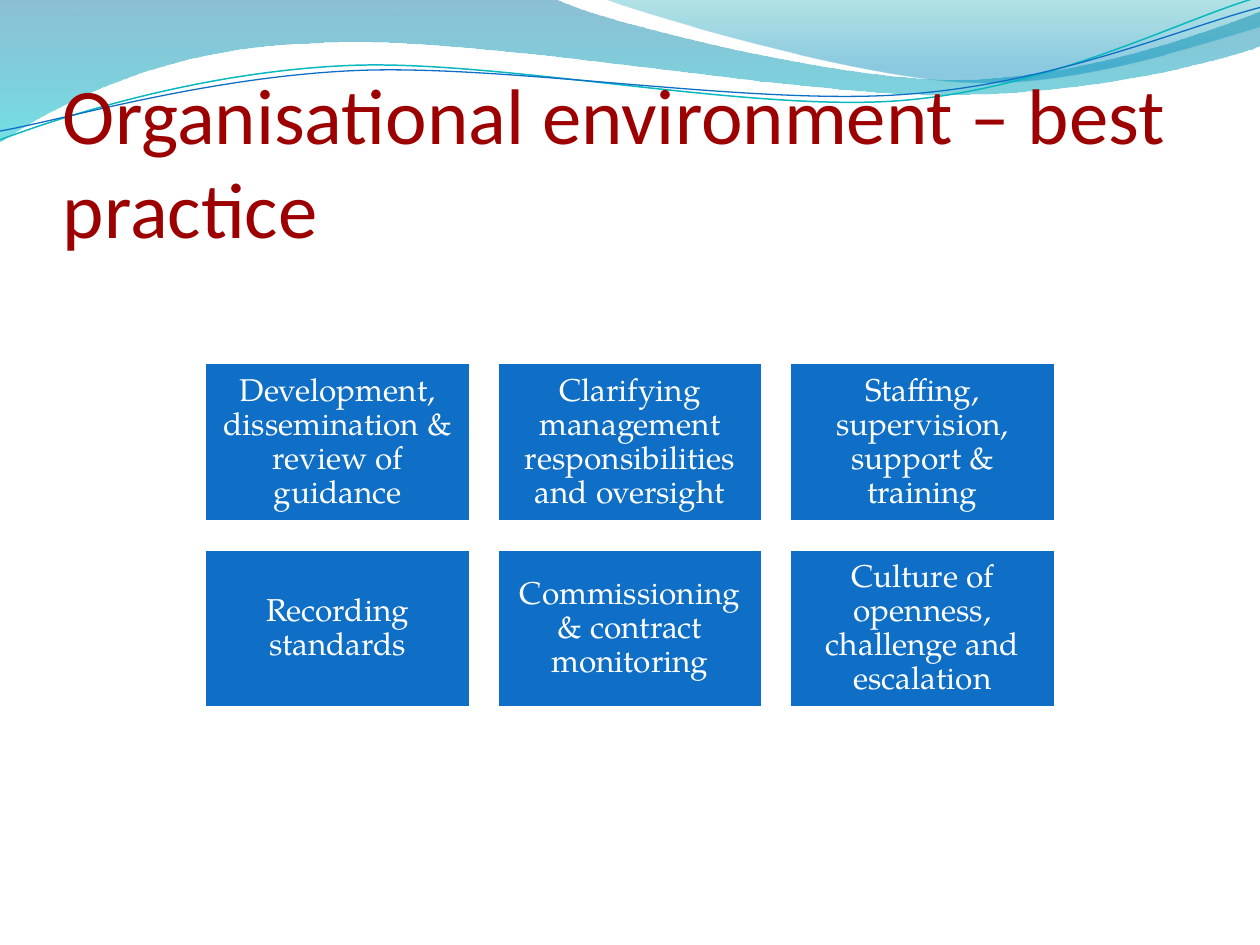
import math

import pptx
import pptx.util
import pptx.dml.color
import pptx.enum.shapes
import pptx.enum.text
import pptx.oxml.ns
import lxml.etree

COLS, ROWS = 10, 7.5


def rgb(value):
    return pptx.dml.color.RGBColor.from_string(value)


def qn(tag):
    return pptx.oxml.ns.qn("a:" + tag)


def turn(point, centre, degrees):
    angle = math.radians(degrees)
    dx, dy = point[0] - centre[0], point[1] - centre[1]
    return (centre[0] + dx * math.cos(angle) - dy * math.sin(angle),
            centre[1] + dx * math.sin(angle) + dy * math.cos(angle))


class Deck:
    title_font, title_size, title_color = "Calibri", 45, "9C0001"
    box_font, box_size, box_color = "TeX Gyre Pagella", 18, "0F6FC6"
    light = "FFFFFF"
    tilt = -2.7

    def __init__(self):
        self.prs = pptx.Presentation()
        self.prs.slide_width = pptx.util.Inches(10)
        self.prs.slide_height = pptx.util.Inches(7.5)
        self.s = self.prs.slides.add_slide(self.prs.slide_layouts[6])

    def x(self, cols):
        return round(self.prs.slide_width * cols / COLS)

    def y(self, rows):
        return round(self.prs.slide_height * rows / ROWS)

    def frame(self, left, top, width, height):
        return self.x(left), self.y(top), self.x(width), self.y(height)

    def outline(self, segments, close):
        segments = [[(self.x(a), self.y(b)) for a, b in seg] for seg in segments]
        ends = [seg[-1] for seg in segments]
        builder = self.s.shapes.build_freeform(*ends[0])
        builder.add_line_segments(ends[1:], close=close)
        sp = builder.convert_to_shape()
        sp.shadow.inherit = False
        for line, seg in zip(list(sp.element.spPr.iter(qn("lnTo"))), segments[1:]):
            if len(seg) == 3:
                line.tag = qn("cubicBezTo")
                for i, (a, b) in enumerate(seg[:2]):
                    pt = line.makeelement(qn("pt"), {"x": str(a - sp.left), "y": str(b - sp.top)})
                    line.insert(i, pt)
        return sp

    def wave(self, segments, stops):
        sp = self.outline(segments, True)
        sp.line.fill.background()
        sp.fill.gradient()
        sp.fill.gradient_angle = 270
        for stop, (position, color, opacity) in zip(sp.fill.gradient_stops, stops):
            stop.position = position
            stop.color.rgb = rgb(color)
        for tag, (position, color, opacity) in zip(sp.element.spPr.iter(qn("srgbClr")), stops):
            lxml.etree.SubElement(tag, qn("alpha")).set("val", str(opacity * 1000))

    def strand(self, segments, centre, color, width):
        level = [[turn(pt, centre, -self.tilt) for pt in seg] for seg in segments]
        sp = self.outline(level, False)
        sp.rotation = self.tilt
        sp.fill.background()
        sp.line.color.rgb = rgb(color)
        sp.line.width = pptx.util.Pt(width)

    def text(self, tf, text, font, size, color, insets, anchor):
        tf.word_wrap = True
        tf.margin_left, tf.margin_top, tf.margin_right, tf.margin_bottom = map(
            pptx.util.Inches, insets)
        tf.vertical_anchor = anchor
        tf.text = text
        p = tf.paragraphs[0]
        r = p.runs[0]
        r.font.name = font
        r.font.size = pptx.util.Pt(size)
        r.font.color.rgb = rgb(color)
        return p

    def title(self, text, *place):
        sp = self.s.shapes.add_textbox(*self.frame(*place))
        p = self.text(sp.text_frame, text, self.title_font, self.title_size, self.title_color,
                      (0, 0.05, 0, 0), pptx.enum.text.MSO_ANCHOR.BOTTOM)
        p.alignment = pptx.enum.text.PP_ALIGN.LEFT

    def box(self, text, *place):
        sp = self.s.shapes.add_shape(pptx.enum.shapes.MSO_SHAPE.RECTANGLE, *self.frame(*place))
        sp.shadow.inherit = False
        sp.fill.solid()
        sp.fill.fore_color.rgb = rgb(self.box_color)
        sp.line.color.rgb = rgb(self.light)
        sp.line.width = pptx.util.Pt(2)
        p = self.text(sp.text_frame, text, self.box_font, self.box_size, self.light,
                      (0.07,) * 4, pptx.enum.text.MSO_ANCHOR.MIDDLE)
        p.alignment = pptx.enum.text.PP_ALIGN.CENTER
        p.line_spacing = 0.9


def main():
    deck = Deck()
    deck.wave([[(0, 0)], [(4.4, -0.01)],
               [(4.76, 0.17), (6.64, 0.63), (7.58, 0.63)],
               [(8.53, 0.63), (9.58, 0.26), (10, 0.09)],
               [(10.01, 0.36)],
               [(9.83, 0.44), (8.7, 0.76), (7.46, 0.75)],
               [(6.22, 0.75), (3.82, 0.28), (2.57, 0.34)],
               [(1.29, 0.36), (0.46, 0.83), (-0.01, 1.13)]],
              [(0, "0074A1", 45), (1, "00C6CF", 55)])
    deck.wave([[(4.79, -0.01)],
               [(5.09, 0.11), (6.82, 0.62), (7.69, 0.65)],
               [(8.56, 0.69), (9.61, 0.32), (10, 0.21)],
               [(10, 0)]],
              [(0, "00A1A9", 30), (0.8, "008BBF", 45)])
    deck.strand([[(0, 1.11)],
                 [(0.48, 0.93), (1.58, 0.57), (2.77, 0.52)],
                 [(3.95, 0.47), (5.93, 0.89), (7.13, 0.8)],
                 [(8.33, 0.71), (9.38, 0.15), (9.98, -0.02)]],
                (4.99, 0.57), "0AB8BF", 0.85)
    deck.strand([[(0, 1.04)],
                 [(0.47, 0.96), (1.64, 0.61), (2.83, 0.56)],
                 [(4.03, 0.51), (5.97, 0.84), (7.17, 0.75)],
                 [(8.36, 0.67), (9.41, 0.21), (10, 0.06)]],
                (5, 0.59), "0F6FC6", 0.75)
    deck.title("Organisational environment – best practice", 0.5, 0.77, 9, 1.25)
    practices = [
        "Development, dissemination & review of guidance",
        "Clarifying management responsibilities and oversight",
        "Staffing, supervision, support & training",
        "Recording standards",
        "Commissioning & contract monitoring",
        "Culture of openness, challenge and escalation",
    ]
    width = 2.11
    height, gap = width * 0.6, width * 0.1
    left = COLS / 2 - 1.5 * width - gap
    top = 4.25 - height - gap / 2
    for i, practice in enumerate(practices):
        row, col = divmod(i, 3)
        deck.box(practice, left + col * (width + gap), top + row * (height + gap), width, height)
    deck.prs.save("out.pptx")


if __name__ == "__main__":
    main()
